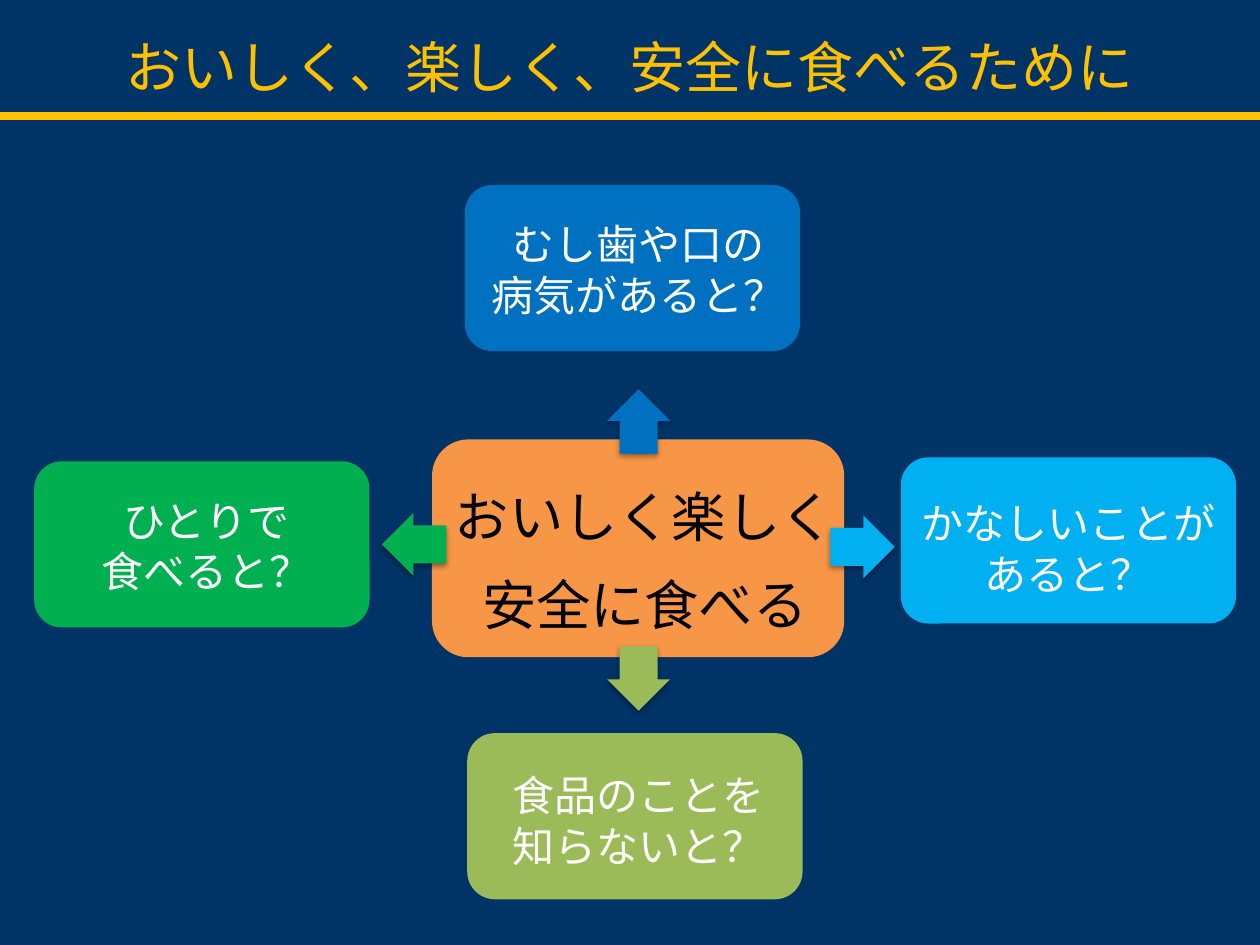
from lxml.etree import SubElement
from pptx import Presentation
from pptx.dml.color import RGBColor
from pptx.enum.shapes import MSO_CONNECTOR as Connector, MSO_SHAPE as Shape
from pptx.enum.text import MSO_ANCHOR as Anchor, MSO_AUTO_SIZE as AutoSize, PP_ALIGN as Align
from pptx.oxml.ns import qn
from pptx.util import Cm, Pt

COLORS = {
    "navy": "003366", "gold": "FFC000", "blue": "0070C0", "green": "00B050",
    "sky": "00B0F0", "olive": "9BBB59", "orange": "F79646",
    "white": "FFFFFF", "black": "000000",
}
FONT = "Noto Sans CJK JP"
CARD_WIDTH, CARD_HEIGHT, LABEL_HEIGHT = 6.76, 3.35, 2.31
ARROW_LENGTH, ARROW_BREADTH = 1.3, 1.27


class SlideBuilder:
    """Draws styled elements on the current slide, with lengths in centimetres."""

    def __init__(self, slide):
        self.slide = slide
        self.paint(slide.background, "navy")

    def color(self, name):
        return RGBColor.from_string(COLORS[name])

    def paint(self, target, name):
        target.fill.solid()
        target.fill.fore_color.rgb = self.color(name)

    def set_text(self, frame, lines, size, color, spacing=None):
        frame.text = "\n".join(lines)
        frame.word_wrap = True
        frame.margin_left = frame.margin_right = 0
        for para in frame.paragraphs:
            para.alignment = Align.CENTER
            if spacing:
                para.line_spacing = Pt(spacing)
            font = para.font
            font.size, font.name = Pt(size), FONT
            font.color.rgb = self.color(color)
            properties = para._p.get_or_add_pPr().find(qn("a:defRPr"))
            SubElement(properties, qn("a:ea"), typeface=FONT)

    def title(self, text, box, size, color):
        title = self.slide.shapes.title
        title.left, title.top, title.width, title.height = map(Cm, box)
        frame = title.text_frame
        frame.auto_size, frame.vertical_anchor = AutoSize.NONE, Anchor.MIDDLE
        self.set_text(frame, [text], size, color)

    def rule(self, left, right, top, color, width):
        line = self.slide.shapes.add_connector(
            Connector.STRAIGHT, Cm(left), Cm(top), Cm(right), Cm(top))
        line.line.color.rgb = self.color(color)
        line.line.width = Pt(width)
        SubElement(line._element.spPr, qn("a:effectLst"))

    def shape(self, kind, box, color):
        shape = self.slide.shapes.add_shape(kind, *map(Cm, box))
        shape.shadow.inherit = False
        self.paint(shape, color)
        shape.line.fill.background()
        return shape

    def label(self, lines, box, size, color, spacing=None):
        label = self.slide.shapes.add_textbox(*map(Cm, box))
        self.set_text(label.text_frame, lines, size, color, spacing)

    def arrow(self, kind, left, top, color):
        size = ARROW_LENGTH, ARROW_BREADTH
        if kind in (Shape.UP_ARROW, Shape.DOWN_ARROW):
            size = size[::-1]
        arrow = self.shape(kind, (left, top, *size), color)
        arrow.adjustments[0], arrow.adjustments[1] = 0.6, 0.5
        effects = arrow._element.spPr.find(qn("a:effectLst"))
        shadow = SubElement(effects, qn("a:outerShdw"), blurRad=str(Pt(3.1)),
                            dist=str(Pt(1.6)), dir="5400000", rotWithShape="0")
        tint = SubElement(shadow, qn("a:srgbClr"), val=COLORS["black"])
        SubElement(tint, qn("a:alpha"), val="38000")


def main():
    deck = Presentation()
    deck.slide_width, deck.slide_height = Cm(25.4), Cm(19.05)
    page = SlideBuilder(deck.slides.add_slide(deck.slide_layouts[5]))
    page.title("おいしく、楽しく、安全に食べるために", (0, 0.66, 25.4, 1.35), 32, "gold")
    page.rule(-0.43, 25.65, 2.34, "gold", 4.5)

    cards = [
        ("blue", (9.37, 3.73), (9.55, 4.29, 6.63), ["むし歯や口の", "病気があると？"]),
        ("green", (0.69, 9.3), (1.7, 9.86, 4.93), ["ひとりで", "食べると？"]),
        ("sky", (18.16, 9.22), (18.31, 9.91, 6.45), ["かなしいことが", "あると？"]),
        ("olive", (9.42, 14.78), (9.93, 15.39, 5.87), ["食品のことを", "知らないと？"]),
    ]
    for color, corner, label_box, lines in cards:
        page.shape(Shape.ROUNDED_RECTANGLE, (*corner, CARD_WIDTH, CARD_HEIGHT), color)
        page.label(lines, (*label_box, LABEL_HEIGHT), 24, "white")

    page.shape(Shape.ROUNDED_RECTANGLE, (8.71, 8.86, 8.31, 4.39), "orange")
    page.label(["おいしく楽しく", "安全に食べる"], (8.84, 9.17, 8.31, 3.81), 31, "black", 50)

    arrows = [
        (Shape.RIGHT_ARROW, 16.74, 10.39, "sky"),
        (Shape.UP_ARROW, 12.24, 7.85, "blue"),
        (Shape.LEFT_ARROW, 7.7, 10.34, "green"),
        (Shape.DOWN_ARROW, 12.24, 13.03, "olive"),
    ]
    for arrow in arrows:
        page.arrow(*arrow)
    deck.save("out.pptx")


if __name__ == "__main__":
    main()
